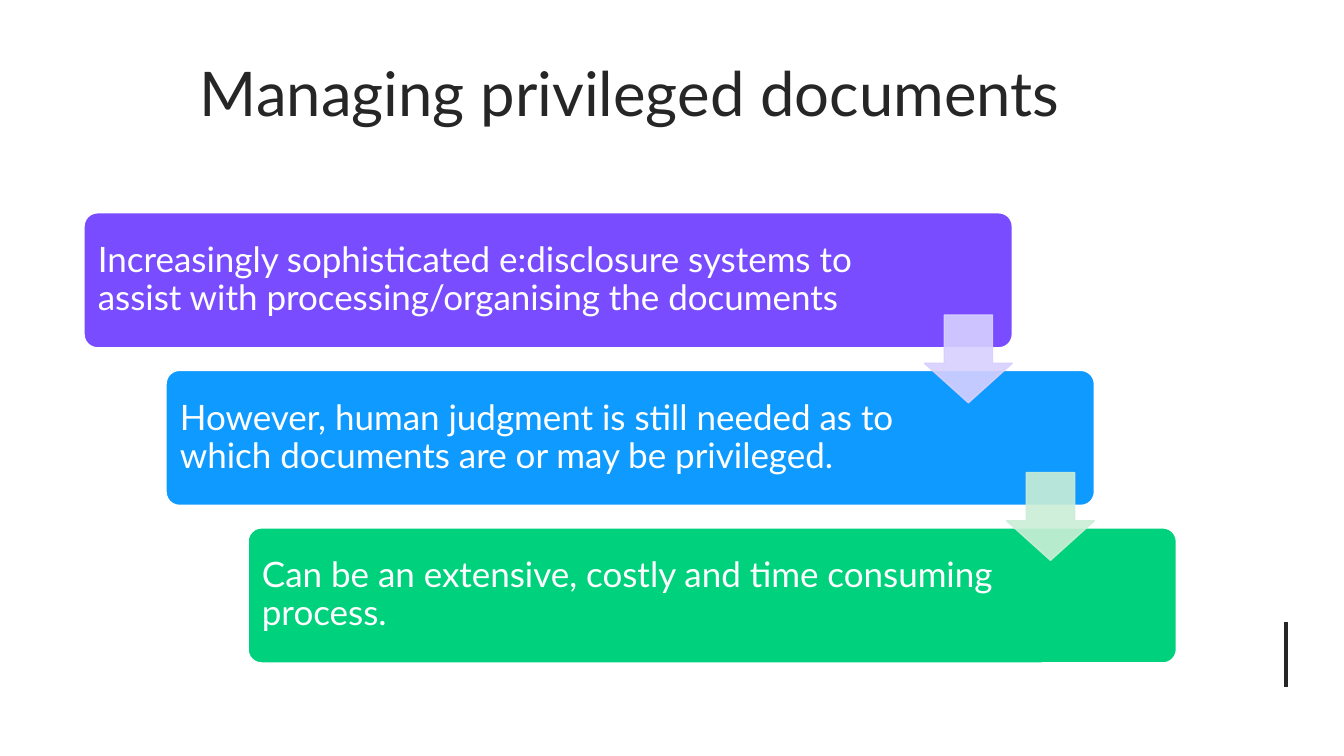
from lxml import etree
from pptx import Presentation
from pptx.dml.color import RGBColor
from pptx.enum.shapes import MSO_CONNECTOR, MSO_SHAPE
from pptx.enum.text import MSO_ANCHOR, PP_ALIGN
from pptx.oxml.ns import qn
from pptx.util import Pt

ROUNDED = MSO_SHAPE.ROUNDED_RECTANGLE
DOWN_ARROW = MSO_SHAPE.DOWN_ARROW
STRAIGHT = MSO_CONNECTOR.STRAIGHT
MIDDLE = MSO_ANCHOR.MIDDLE
LEFT, CENTER = PP_ALIGN.LEFT, PP_ALIGN.CENTER

FONT = "Lato"
DARK, WHITE = "262626", "FFFFFF"

# Wording, fill, right text inset
STEPS = [
    ("Increasingly sophisticated e:disclosure systems to assist with "
     "processing/organising the documents", "794DFF", 106),
    ("However, human judgment is still needed as to which documents are "
     "or may be privileged.", "0F9AFF", 128),
    ("Can be an extensive, costly and time consuming process.", "00D17D", 128),
]
ARROW_COLORS = ["D7D0FF", "CBEED7"]


def rgb(value):
    return RGBColor.from_string(value)


def write(frame, text, size, color, align):
    frame.word_wrap = True
    frame.vertical_anchor = MIDDLE
    para = frame.paragraphs[0]
    para.alignment = align
    para.line_spacing = 0.9
    span = para.add_run()
    span.text = text
    span.font.name = FONT
    span.font.size = Pt(size)
    span.font.color.rgb = rgb(color)


def add_block(page, kind, box, fill, line, adjustments):
    shape = page.shapes.add_shape(kind, *[Pt(length) for length in box])
    shape.shadow.inherit = False
    shape.fill.solid()
    shape.fill.fore_color.rgb = rgb(fill)
    shape.line.color.rgb = rgb(line)
    shape.line.width = Pt(1)
    for index, value in enumerate(adjustments):
        shape.adjustments[index] = value
    return shape


def add_title(page, box, text):
    title = page.shapes.title
    title.left, title.top, title.width, title.height = [Pt(n) for n in box]
    write(title.text_frame, text, 44, DARK, CENTER)


def add_staircase(page, box):
    left, top, width, height = box
    bar_width, bar_height = 663.1, 96.5
    step_x = (width - bar_width) / (len(STEPS) - 1)
    step_y = (height - bar_height) / (len(STEPS) - 1)

    # Stepped bars
    for index, (text, fill, inset) in enumerate(STEPS):
        place = (left + index * step_x, top + index * step_y,
                 bar_width, bar_height)
        bar = add_block(page, ROUNDED, place, fill, WHITE, [0.1])
        frame = bar.text_frame
        frame.margin_left = frame.margin_top = frame.margin_bottom = Pt(7.2)
        frame.margin_right = Pt(inset)
        write(frame, text, 25, WHITE, LEFT)

    # Arrows bridging neighbouring bars
    size = 62.7
    for index, color in enumerate(ARROW_COLORS):
        place = (left + bar_width - size + index * step_x,
                 top + 73 + index * step_y, size, size)
        arrow = add_block(page, DOWN_ARROW, place, color, color, [0.55, 0.45])
        for tint in arrow._element.spPr.iter(qn("a:srgbClr")):
            etree.SubElement(tint, qn("a:alpha")).set("val", "90000")


def add_corner_rule(page, box):
    left, top, width, height = box
    rule = page.shapes.add_connector(STRAIGHT, Pt(left), Pt(top),
                                     Pt(left + width), Pt(top + height))
    rule.line.color.rgb = rgb(DARK)
    rule.line.width = Pt(3)
    etree.SubElement(rule._element.spPr, qn("a:effectLst"))


def main():
    deck = Presentation()
    deck.slide_width, deck.slide_height = Pt(960), Pt(540)
    page = deck.slides.add_slide(deck.slide_layouts[5])
    page.background.fill.solid()
    page.background.fill.fore_color.rgb = rgb(WHITE)

    add_corner_rule(page, (918.7, 444.2, 0, 46.8))
    add_title(page, (60, 23, 780, 91.5), "Managing privileged documents")
    add_staircase(page, (60, 152, 780.3, 321.6))
    deck.save("out.pptx")


if __name__ == "__main__":
    main()
